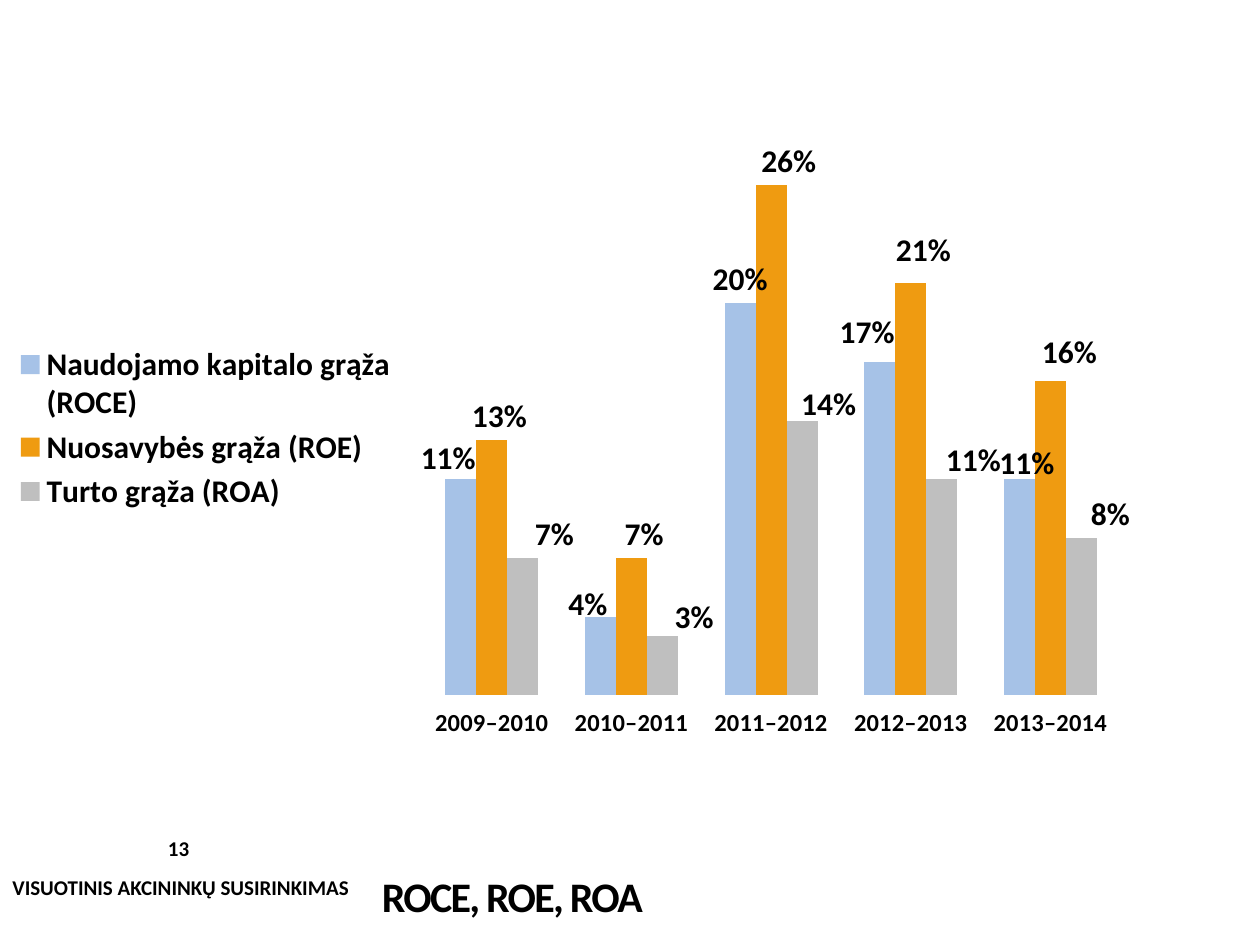
import pptx
import pptx.chart.data
import pptx.dml.color
import pptx.enum.chart
import pptx.enum.text
import pptx.oxml
import pptx.oxml.ns
import pptx.util

Cm = pptx.util.Cm
Pt = pptx.util.Pt
CHART = pptx.enum.chart
ALIGN = pptx.enum.text.PP_ALIGN

YEARS = ["2009–2010", "2010–2011", "2011–2012", "2012–2013", "2013–2014", ""]
PLOT_AREA = (0.335, 0.126, 0.665, 0.685)
RETURNS = [
    ("Naudojamo kapitalo grąža (ROCE)", "A6C2E7", (0.11, 0.04, 0.2, 0.17, 0.11, None),
     {0: (-1, 0.3), 1: (-1, 1.4), 3: (-1, -0.6), 4: (0.6, 0.9)}),
    ("Nuosavybės grąža (ROE)", "EF9B11", (0.13, 0.07, 0.26, 0.21, 0.16, None),
     {0: (0.6, 0), 1: (1, 0), 2: (1.4, 0), 3: (1, -1), 4: (1.5, -0.6)}),
    ("Turto grąža (ROA)", "BFBFBF", (0.07, 0.03, 0.14, 0.11, 0.08, None),
     {0: (2.5, 0), 1: (2.5, 0.6), 2: (2.1, 0.9), 3: (2.5, 0.6), 4: (2.3, 0)}),
]


def color(value):
    return pptx.dml.color.RGBColor.from_string(value)


def layout_element(sizes, modes=()):
    fields = [(f"{name}Mode", mode) for name, mode in modes] + list(sizes)
    if modes:
        fields.insert(0, ("layoutTarget", "inner"))
    body = "".join(f'<c:{name} val="{value}"/>' for name, value in fields)
    namespace = pptx.oxml.ns.nsdecls("c")
    return pptx.oxml.parse_xml(
        f"<c:layout {namespace}><c:manualLayout>{body}</c:manualLayout></c:layout>")


class SlideBuilder:
    """Holds the text style and the current page, and adds elements to it."""

    font_name = "Calibri"
    ink = "000000"

    def __init__(self, deck):
        self.page = deck.slides.add_slide(deck.slide_layouts[6])

    def style(self, font, size):
        font.name = self.font_name
        font.size = Pt(size)
        font.bold = True
        font.color.rgb = color(self.ink)

    def text(self, words, left, top, width, height, size=12, align=ALIGN.LEFT,
             margin=None, spacing=None):
        box = self.page.shapes.add_textbox(Cm(left), Cm(top), Cm(width), Cm(height))
        frame = box.text_frame
        frame.word_wrap = True
        if margin is not None:
            frame.margin_left = frame.margin_right = Cm(margin)
            frame.margin_top = frame.margin_bottom = Cm(margin)
        para = frame.paragraphs[0]
        para.alignment = align
        span = para.add_run()
        span.text = words
        self.style(span.font, size)
        if spacing is not None:
            span.font._element.set("spc", str(spacing))

    def column_chart(self, left, top, width, height):
        data = pptx.chart.data.CategoryChartData(number_format="0%")
        data.categories = YEARS
        for name, fill, values, shifts in RETURNS:
            data.add_series(name, values)
        chart = self.page.shapes.add_chart(
            CHART.XL_CHART_TYPE.COLUMN_CLUSTERED,
            Cm(left), Cm(top), Cm(width), Cm(height), data).chart
        self.style(chart.font, 18)
        chart.has_title = False
        chart.has_legend = True
        chart.legend.position = CHART.XL_LEGEND_POSITION.LEFT
        chart.legend.include_in_layout = False
        self.style(chart.legend.font, 18)
        self.axes(chart)
        plot = chart.plots[0]
        plot.gap_width = 150
        plot.overlap = 0
        plot.vary_by_categories = False
        for series, (name, fill, values, shifts) in zip(plot.series, RETURNS):
            series.format.fill.solid()
            series.format.fill.fore_color.rgb = color(fill)
            self.labels(series, shifts)
        area = chart._chartSpace.chart.plotArea
        for old in area.findall(pptx.oxml.ns.qn("c:layout")):
            area.remove(old)
        modes = [("x", "edge"), ("y", "edge")]
        area.insert(0, layout_element(zip("xywh", PLOT_AREA), modes))

    def axes(self, chart):
        years = chart.category_axis
        years.format.line.fill.background()
        years.major_tick_mark = CHART.XL_TICK_MARK.OUTSIDE
        self.style(years.tick_labels.font, 14)
        scale = chart.value_axis
        scale.minimum_scale, scale.maximum_scale = 0, 0.3
        scale.has_major_gridlines = False
        scale.tick_labels.number_format = "0%"
        scale.tick_labels.number_format_is_linked = False
        scale.visible = False

    def labels(self, series, shifts):
        above = CHART.XL_LABEL_POSITION.OUTSIDE_END
        labels = series.data_labels
        labels.show_value = True
        labels.number_format = "0%"
        labels.number_format_is_linked = False
        labels.position = above
        self.style(labels.font, 18)
        for index, (across, down) in shifts.items():
            label = series.points[index].data_label
            self.style(label.font, 18)
            label.position = above
            element = labels._element.get_dLbl_for_point(index)
            offset = [("x", across / 100), ("y", down / 100)]
            element.insert(1, layout_element(offset))


def main():
    deck = pptx.Presentation()
    deck.slide_width, deck.slide_height = Cm(25.4), Cm(19.05)
    builder = SlideBuilder(deck)
    builder.text("13", 2.9, 16.71, 1.4, 0.76, align=ALIGN.CENTER)
    builder.text("VISUOTINIS AKCININKŲ SUSIRINKIMAS", 0, 17.5, 7.5, 0.76)
    builder.text("ROCE, ROE, ROA", 7.7, 17.55, 17.2, 1.5, size=24, margin=0, spacing=-100)
    builder.column_chart(0, -0.03, 25.4, 17.32)
    deck.save("out.pptx")


if __name__ == "__main__":
    main()
